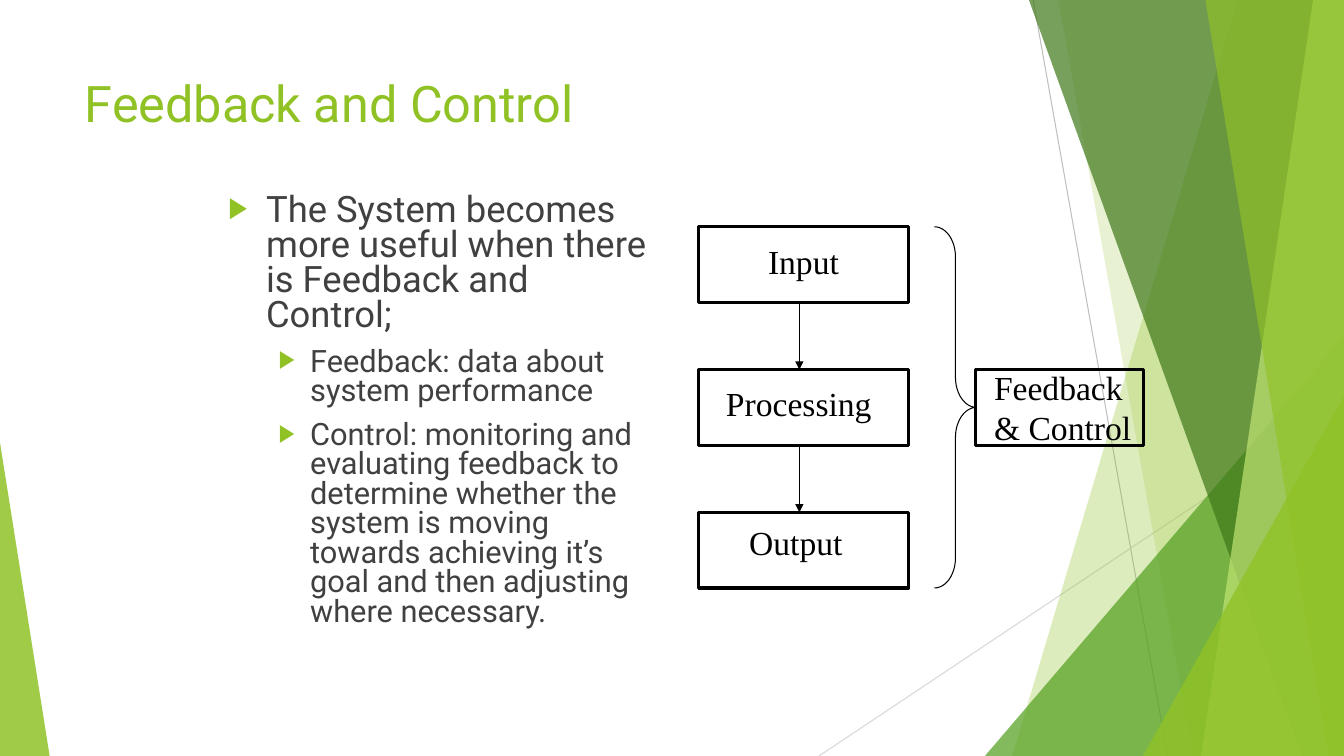
from lxml.etree import SubElement
from pptx import Presentation
from pptx.dml.color import RGBColor
from pptx.enum.shapes import MSO_CONNECTOR, MSO_SHAPE
from pptx.enum.text import MSO_ANCHOR, MSO_AUTO_SIZE
from pptx.oxml.ns import qn
from pptx.util import Pt

WIDTH, HEIGHT = 960, 540
GREEN, INK, BLACK = "90C226", "404040", "000000"


def color(hex_code):
    return RGBColor.from_string(hex_code)


def paint(shape, fill=None, opacity=100, line=None, weight=0.75):
    shape.shadow.inherit = False
    if fill:
        shape.fill.solid()
        shape.fill.fore_color.rgb = color(fill)
        tint = shape.fill._xPr.find(qn("a:solidFill"))[0]
        SubElement(tint, qn("a:alpha"), val=str(opacity * 1000))
    else:
        shape.fill.background()
    if line:
        shape.line.color.rgb = color(line)
        shape.line.width = Pt(weight)
    else:
        shape.line.fill.background()


def add_preset(page, kind, box, adjust=(), **look):
    shape = page.shapes.add_shape(kind, *map(Pt, box))
    for index, value in enumerate(adjust):
        shape.adjustments[index] = value
    paint(shape, **look)


def add_line(page, start, end, hex_code, arrow=False):
    line = page.shapes.add_connector(MSO_CONNECTOR.STRAIGHT, *map(Pt, start + end))
    line.line.color.rgb = color(hex_code)
    line.line.width = Pt(0.75)
    if arrow:
        SubElement(line.line._get_or_add_ln(), qn("a:tailEnd"), type="triangle")
    SubElement(line._element.spPr, qn("a:effectLst"))


def add_frame(page, box, wrap=True):
    frame = page.shapes.add_textbox(*map(Pt, box)).text_frame
    frame.word_wrap = wrap
    frame.auto_size = MSO_AUTO_SIZE.NONE if wrap else MSO_AUTO_SIZE.SHAPE_TO_FIT_TEXT
    frame.vertical_anchor = MSO_ANCHOR.TOP
    return frame


def write(frame, text, size=24, font="Roboto", ink=BLACK):
    para = frame.paragraphs[0]
    if para.runs:
        para = frame.add_paragraph()
    span = para.add_run()
    span.text = text
    span.font.size = Pt(size)
    span.font.name = font
    span.font.color.rgb = color(ink)
    return para


def add_bullet(para, level, indent, hanging):
    para.level = level
    para.line_spacing = 0.8
    para.space_before = Pt(10)
    properties = para._p.get_or_add_pPr()
    properties.set("marL", str(Pt(indent)))
    properties.set("indent", str(-Pt(hanging)))
    tint = SubElement(properties, qn("a:buClr"))
    SubElement(tint, qn("a:srgbClr"), val=GREEN)
    SubElement(properties, qn("a:buSzPct"), val="80000")
    SubElement(properties, qn("a:buFont"), typeface="Arial")
    SubElement(properties, qn("a:buChar"), char="▶")


def draw_backdrop(page, box):
    left, top, width, height = box
    right, bottom = left + width, top + height

    def add_band(top_x, bottom_x, fill, opacity):
        outline = page.shapes.build_freeform(left + top_x, top, scale=Pt(1))
        outline.add_line_segments(
            [(right, top), (right, bottom), (left + bottom_x, bottom)], close=True)
        paint(outline.convert_to_shape(), fill=fill, opacity=opacity)

    def add_corner(x, wide, tall, peak, fill, opacity):
        add_preset(page, MSO_SHAPE.ISOSCELES_TRIANGLE,
                   (left + x, bottom - tall, wide, tall), [peak],
                   fill=fill, opacity=opacity)

    # Thin lines
    add_line(page, (left + 738, top), (left + 834, bottom), "BFBFBF")
    add_line(page, (right, top + 290), (left + 585, bottom), "D9D9D9")
    # Translucent bands and corner triangles
    add_band(884, 723, GREEN, 30)
    add_band(756, 852, GREEN, 20)
    add_corner(703.5, 256.5, 300, 1, "54A021", 72)
    add_band(735, 929.5, "3F7819", 70)
    add_band(938, 858.5, "C0E474", 70)
    add_band(861, 949, GREEN, 65)
    add_corner(816.5, 143.5, 257, 1, GREEN, 80)
    add_corner(0, 35.5, 224, 0, GREEN, 85)


def draw_title(page, box):
    write(add_frame(page, box), "Feedback and Control", size=36, ink=GREEN)


def draw_body(page, box):
    frame = add_frame(page, box)
    points = [
        (0, "The System becomes more useful when there is Feedback and Control;"),
        (1, "Feedback: data about system performance"),
        (1, "Control: monitoring and evaluating feedback to determine whether the "
            "system is moving towards achieving it’s goal and then adjusting where "
            "necessary."),
    ]
    styles = [(26, 27, 27), (22, 58.5, 22.5)]
    for level, text in points:
        size, indent, hanging = styles[level]
        add_bullet(write(frame, text, size=size, ink=INK), level, indent, hanging)


def draw_diagram(page, box):
    left, top, width, height = box
    step_width, step_height = 150, 54
    pitch = (height - step_height) / 2
    tops = [top + pitch * row for row in range(3)]

    # Step boxes and the arrows between them
    for step_top in tops:
        add_preset(page, MSO_SHAPE.RECTANGLE,
                   (left, step_top, step_width, step_height), line=BLACK, weight=2.25)
    for step_top in tops[:-1]:
        add_line(page, (left + 72, step_top + step_height),
                 (left + 72, step_top + pitch), BLACK, arrow=True)

    # Brace and the box it points to
    add_preset(page, MSO_SHAPE.RIGHT_BRACE, (left + 168.5, top, 30, height),
               [0.717, 0.5], line=BLACK)
    control_left = left + 198
    add_preset(page, MSO_SHAPE.RECTANGLE,
               (control_left, tops[1], width - 198, step_height), line=BLACK, weight=2.25)

    # Labels
    labels = [
        (["Input"], left + 42.5, tops[0] + 6.5, 65, 36),
        (["Processing"], left + 12.5, tops[1] + 6, 119, 36),
        (["Output"], left + 29, tops[2] + 3, 81, 36),
        (["Feedback", "& Control"], control_left + 6, tops[1] - 5.5, 113, 65.5),
    ]
    for lines, *place in labels:
        frame = add_frame(page, place, wrap=False)
        for text in lines:
            write(frame, text, font="Times New Roman")


def main():
    deck = Presentation()
    deck.slide_width, deck.slide_height = Pt(WIDTH), Pt(HEIGHT)
    page = deck.slides.add_slide(deck.slide_layouts[6])
    draw_backdrop(page, (0, 0, WIDTH, HEIGHT))
    draw_title(page, (53.5, 48, 677, 104))
    draw_body(page, (156, 135.5, 324, 347))
    draw_diagram(page, (499, 162, 318, 258))
    deck.save("out.pptx")


if __name__ == "__main__":
    main()
